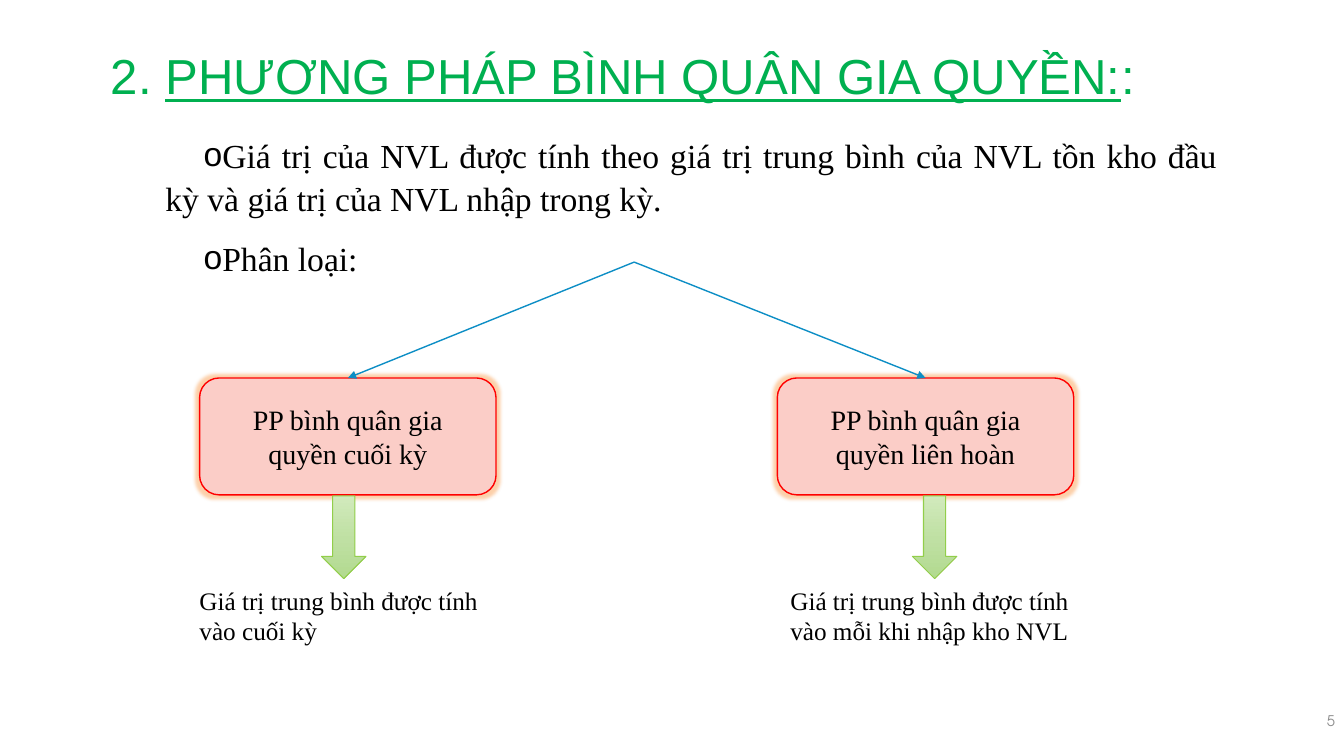
import copy
from dataclasses import dataclass

import pptx
import pptx.dml.color
import pptx.enum.shapes
import pptx.enum.text
import pptx.oxml.ns
import pptx.util
from lxml import etree

PX = 9144  # 100 px to the inch
ALIGN = pptx.enum.text.PP_ALIGN
ANCHOR = pptx.enum.text.MSO_ANCHOR
SHAPE = pptx.enum.shapes.MSO_SHAPE
qn = pptx.oxml.ns.qn


@dataclass(frozen=True)
class Theme:
    heading: str = "00B050"
    text: str = "000000"
    number: str = "8C8C8C"
    method_fill: str = "FBCDC7"
    method_line: str = "FF0000"
    glow: str = "F98A2B"
    arrow_line: str = "92CE4A"
    arrow_stops: tuple = ("D1EABC", "BFE0A3", "B2DA8F")
    branch: str = "0D8EC5"
    heading_font: str = "Arial"
    body_font: str = "Times New Roman"
    number_font: str = "TeX Gyre Adventor"
    heading_size: float = 35.1
    body_size: float = 24
    method_size: float = 20
    caption_size: float = 18
    number_size: float = 10.5


THEME = Theme()


def rgb(value):
    return pptx.dml.color.RGBColor.from_string(value)


def px(*lengths):
    return [pptx.util.Emu(length * PX) for length in lengths]


def place(shape, box):
    shape.left, shape.top, shape.width, shape.height = px(*box)


def set_up_frame(frame, anchor=ANCHOR.TOP):
    frame.word_wrap = True
    frame.auto_size = pptx.enum.text.MSO_AUTO_SIZE.NONE
    frame.vertical_anchor = anchor


def format_runs(paragraph, size, color=THEME.text, font=THEME.body_font):
    for run in paragraph.runs:
        run.font.size = pptx.util.Pt(size)
        run.font.name = font
        run.font.color.rgb = rgb(color)


def write(frame, text, size, align=ALIGN.LEFT, anchor=ANCHOR.TOP, **style):
    set_up_frame(frame, anchor)
    frame.text = text
    frame.paragraphs[0].alignment = align
    format_runs(frame.paragraphs[0], size, **style)


def outline(shape, color, width):
    shape.line.color.rgb = rgb(color)
    shape.line.width = pptx.util.Pt(width)


def add_heading(slide, box):
    heading = slide.shapes.title
    place(heading, box)
    set_up_frame(heading.text_frame)
    paragraph = heading.text_frame.paragraphs[0]
    paragraph.alignment = ALIGN.JUSTIFY
    paragraph.line_spacing = 0.9
    for text, underlined in (("2. ", False),
                             ("PHƯƠNG PHÁP BÌNH QUÂN GIA QUYỀN:", True),
                             (":", False)):
        run = paragraph.add_run()
        run.text = text
        run.font.underline = underlined
    format_runs(paragraph, THEME.heading_size, THEME.heading,
                THEME.heading_font)


def add_definition(slide, box, points):
    definition = slide.placeholders[1]
    place(definition, box)
    frame = definition.text_frame
    set_up_frame(frame)
    frame.text = "\n".join(points)
    for index, paragraph in enumerate(frame.paragraphs):
        paragraph.alignment = ALIGN.JUSTIFY
        paragraph.line_spacing = 1.07
        paragraph.space_before = pptx.util.Pt(6 if index else 0)
        paragraph.space_after = pptx.util.Pt(6)
        # Bullet on an indented first line
        properties = paragraph._p.get_or_add_pPr()
        properties.set("marL", "0")
        properties.set("indent", str(38 * PX))
        etree.SubElement(properties, qn("a:buFont"), typeface="Arial")
        etree.SubElement(properties, qn("a:buChar"), char="o")
        format_runs(paragraph, THEME.body_size)


def add_method(slide, box, text):
    method = slide.shapes.add_shape(SHAPE.ROUNDED_RECTANGLE, *px(*box))
    method.fill.solid()
    method.fill.fore_color.rgb = rgb(THEME.method_fill)
    outline(method, THEME.method_line, 1)
    # Soft glow in place of the shadow
    method.shadow.inherit = False
    effects = method._element.spPr.find(qn("a:effectLst"))
    glow = etree.SubElement(effects, qn("a:glow"), rad="63500")
    color = etree.SubElement(glow, qn("a:srgbClr"), val=THEME.glow)
    etree.SubElement(color, qn("a:alpha"), val="40000")
    write(method.text_frame, text, THEME.method_size, ALIGN.CENTER,
          ANCHOR.MIDDLE)


def add_down_arrow(slide, box):
    arrow = slide.shapes.add_shape(SHAPE.DOWN_ARROW, *px(*box))
    arrow.shadow.inherit = False
    outline(arrow, THEME.arrow_line, 0.75)
    arrow.fill.gradient()
    arrow.fill.gradient_angle = 270
    # The middle stop is added to the two that a new gradient has
    stops = arrow._element.spPr.find(qn("a:gradFill")).find(qn("a:gsLst"))
    stops.insert(1, copy.deepcopy(stops[0]))
    for stop, color, position in zip(arrow.fill.gradient_stops,
                                     THEME.arrow_stops, (0, 0.52, 1)):
        stop.color.rgb = rgb(color)
        stop.position = position


def add_caption(slide, box, text):
    caption = slide.shapes.add_textbox(*px(*box))
    write(caption.text_frame, text, THEME.caption_size)


def add_branch(slide, start, end):
    branch = slide.shapes.add_connector(
        pptx.enum.shapes.MSO_CONNECTOR.STRAIGHT, *px(*start, *end))
    outline(branch, THEME.branch, 1)
    etree.SubElement(branch.line._get_or_add_ln(), qn("a:tailEnd"),
                     type="triangle")
    etree.SubElement(branch._element.spPr, qn("a:effectLst"))


def add_classification(slide, box, methods):
    left, top, width, height = box
    root = (left + width // 2, top)
    method_top, method_width, method_height = top + 115, 294, 116
    arrow_top = method_top + method_height + 1
    for method_left, arrow_left, caption_left, name, result in methods:
        method_x = left + method_left
        add_method(slide, (method_x, method_top, method_width, method_height),
                   name)
        add_down_arrow(slide, (left + arrow_left, arrow_top, 44, 82))
        add_caption(slide, (left + caption_left, top + height - 71, 305, 71),
                    result)
        add_branch(slide, root, (method_x + method_width // 2, method_top))


def add_slide_number(slide, box, number):
    label = slide.shapes.add_textbox(*px(*box))
    write(label.text_frame, number, THEME.number_size, ALIGN.RIGHT,
          ANCHOR.MIDDLE, color=THEME.number, font=THEME.number_font)


def main():
    deck = pptx.Presentation()
    deck.slide_width, deck.slide_height = px(1333, 750)
    slide = deck.slides.add_slide(deck.slide_layouts[1])

    add_heading(slide, (100, 47, 1150, 89))
    add_definition(slide, (154, 126, 1063, 148), (
        "Giá trị của NVL được tính theo giá trị trung bình của NVL tồn kho "
        "đầu kỳ và giá trị của NVL nhập trong kỳ.",
        "Phân loại:",
    ))
    # Left edges of method, arrow and caption, then their texts
    add_classification(slide, (188, 260, 882, 387), (
        (10, 131, 0, "PP bình quân gia quyền cuối kỳ",
         "Giá trị trung bình được tính vào cuối kỳ"),
        (583, 717, 586, "PP bình quân gia quyền liên hoàn",
         "Giá trị trung bình được tính vào mỗi khi nhập kho NVL"),
    ))
    add_slide_number(slide, (1250, 695, 84, 40), "5")
    deck.save("out.pptx")


if __name__ == "__main__":
    main()
